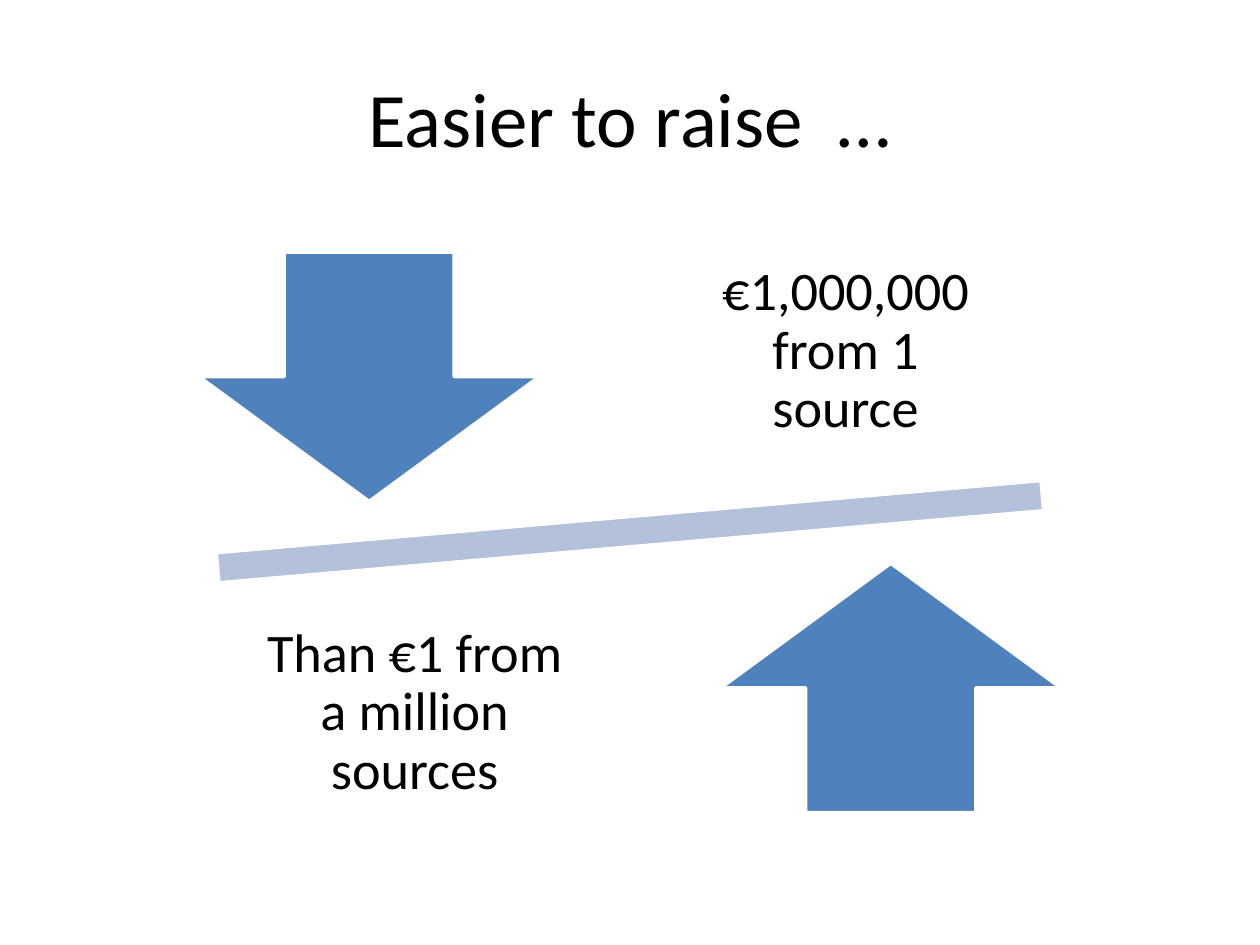
from typing import NamedTuple

from pptx import Presentation
from pptx.dml.color import RGBColor
from pptx.enum.shapes import MSO_SHAPE
from pptx.enum.text import MSO_ANCHOR, PP_ALIGN
from pptx.util import Inches, Pt

BLACK = RGBColor(0x00, 0x00, 0x00)
WHITE = RGBColor(0xFF, 0xFF, 0xFF)
ARROW_BLUE = RGBColor(0x4F, 0x81, 0xBD)
BEAM_BLUE = RGBColor(0xB3, 0xC1, 0xDB)
FONT = "Calibri"


class Figure(NamedTuple):
    kind: MSO_SHAPE
    left: float
    top: float
    width: float
    height: float
    color: RGBColor
    rotation: float = 0


class Label(NamedTuple):
    text: str
    left: float
    top: float
    width: float = 2.88
    height: float = 2.08


FIGURES = [
    Figure(MSO_SHAPE.MATH_MINUS, 0.53, 3.71, 8.94, 1.02, BEAM_BLUE, 355),
    Figure(MSO_SHAPE.DOWN_ARROW, 1.58, 2, 2.7, 1.98, ARROW_BLUE),
    Figure(MSO_SHAPE.UP_ARROW, 5.72, 4.47, 2.7, 1.98, ARROW_BLUE),
]
LABELS = [
    Label("€1,000,000 from 1 source", 5.27, 1.75),
    Label("Than €1 from a million sources", 1.85, 4.62),
]


def set_text(shape, text: str, size: float):
    """Fill a shape with one centred paragraph and return that paragraph."""
    frame = shape.text_frame
    frame.word_wrap = True
    frame.vertical_anchor = MSO_ANCHOR.MIDDLE
    paragraph = frame.paragraphs[0]
    paragraph.text = text
    paragraph.alignment = PP_ALIGN.CENTER
    paragraph.font.name = FONT
    paragraph.font.size = Pt(size)
    paragraph.font.color.rgb = BLACK
    return paragraph


def add_title(slide, text: str) -> None:
    title = slide.shapes.title
    title.left, title.top = Inches(0.5), Inches(0.3)
    title.width, title.height = Inches(9), Inches(1.25)
    set_text(title, text, 44)


def add_figure(slide, figure: Figure) -> None:
    shape = slide.shapes.add_shape(
        figure.kind, Inches(figure.left), Inches(figure.top),
        Inches(figure.width), Inches(figure.height))
    shape.rotation = figure.rotation
    shape.shadow.inherit = False
    shape.fill.solid()
    shape.fill.fore_color.rgb = figure.color
    shape.line.color.rgb = WHITE
    shape.line.width = Pt(2)


def add_label(slide, label: Label) -> None:
    box = slide.shapes.add_textbox(
        Inches(label.left), Inches(label.top),
        Inches(label.width), Inches(label.height))
    frame = box.text_frame
    frame.margin_left = frame.margin_right = Inches(0.24)
    frame.margin_top = frame.margin_bottom = Inches(0.24)
    paragraph = set_text(box, label.text, 31)
    paragraph.line_spacing = 0.9


def main() -> None:
    presentation = Presentation()
    presentation.slide_width = Inches(10)
    presentation.slide_height = Inches(7.5)
    slide = presentation.slides.add_slide(presentation.slide_layouts[5])
    add_title(slide, "Easier to raise  …")
    for figure in FIGURES:
        add_figure(slide, figure)
    for label in LABELS:
        add_label(slide, label)
    presentation.save("out.pptx")


if __name__ == "__main__":
    main()
